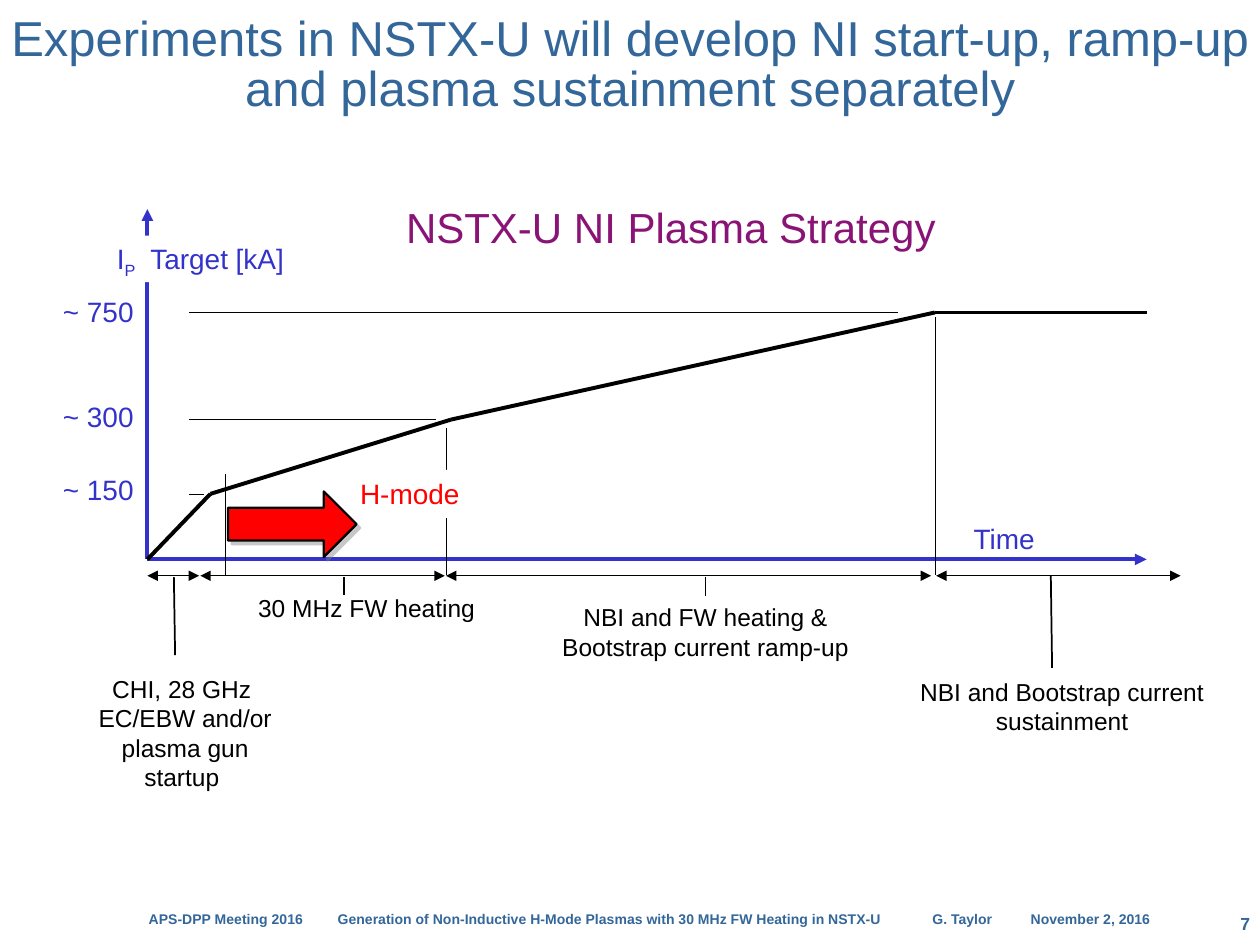
from itertools import pairwise

from lxml import etree
from pptx import Presentation
from pptx.dml.color import RGBColor
from pptx.enum.shapes import MSO_CONNECTOR, MSO_SHAPE
from pptx.enum.text import MSO_ANCHOR, PP_ALIGN as ALIGN
from pptx.oxml import parse_xml
from pptx.oxml.ns import nsdecls, qn
from pptx.util import Inches, Pt

BLUE, BLACK, WHITE, RED = "3333CC", "000000", "FFFFFF", "FF0000"
STEEL, PURPLE = "336699", "891476"
color = RGBColor.from_string

presentation = Presentation()
presentation.slide_width, presentation.slide_height = Inches(10), Inches(7.5)
slide = presentation.slides.add_slide(presentation.slide_layouts[5])


def add_line(start, end, width, line_color=BLACK, arrows=()):
    """Draw a straight line; arrows names its arrow ends, headEnd before tailEnd."""
    line = slide.shapes.add_connector(
        MSO_CONNECTOR.STRAIGHT, *(Inches(value) for value in (*start, *end)))
    line.line.width = Pt(width)
    line.line.color.rgb = color(line_color)
    for arrow in arrows:
        etree.SubElement(line.line._get_or_add_ln(), qn(f"a:{arrow}"), type="triangle")
    etree.SubElement(line._element.spPr, qn("a:effectLst"))
    return line


def add_text(place, text, size, text_color, align=ALIGN.LEFT, fill=None, insets=(0.1, 0.05)):
    box = slide.shapes.add_textbox(*(Inches(value) for value in place))
    if fill:
        box.fill.solid()
        box.fill.fore_color.rgb = color(fill)
    frame = box.text_frame
    frame.word_wrap = True
    frame.margin_left = frame.margin_right = Inches(insets[0])
    frame.margin_top = frame.margin_bottom = Inches(insets[1])
    frame.text = text
    for paragraph in frame.paragraphs:
        paragraph.alignment = align
        paragraph.font.name = "Arial"
        paragraph.font.size = Pt(size)
        paragraph.font.color.rgb = color(text_color)
    return box


# Title
title = slide.shapes.title
title.left, title.top, title.width, title.height = 0, 0, Inches(10), Inches(1.05)
frame = title.text_frame
frame.text = "Experiments in NSTX-U will develop NI start-up, ramp-up and plasma sustainment separately"
frame.word_wrap = True
frame.vertical_anchor = MSO_ANCHOR.MIDDLE
frame.margin_left = frame.margin_right = frame.margin_top = frame.margin_bottom = 0
paragraph = frame.paragraphs[0]
paragraph.alignment = ALIGN.CENTER
paragraph.line_spacing = 0.85
paragraph.font.name = "Arial"
paragraph.font.size = Pt(28)
paragraph.font.color.rgb = color(STEEL)

# Footer, its parts set apart by tab stops
page_number = add_text((9.25, 7.2, 0.67, 0.27), "7", 10, STEEL, ALIGN.RIGHT, insets=(0, 0.05))
page_number.text_frame.paragraphs[0].font.bold = True
footer_parts = ["APS-DPP Meeting 2016",
                "Generation of Non-Inductive H-Mode Plasmas with 30 MHz FW Heating in NSTX-U",
                "G. Taylor", "November 2, 2016"]
footer = add_text((1.18, 7.18, 8.15, 0.24), "\t".join(footer_parts), 8, STEEL, insets=(0, 0.05))
paragraph = footer.text_frame.paragraphs[0]
paragraph.font.bold = True
tabs = etree.Element(qn("a:tabLst"))
for position in (1.5, 6.22, 7):
    etree.SubElement(tabs, qn("a:tab"), pos=str(Inches(position)), algn="l")
paragraph._p.get_or_add_pPr().find(qn("a:defRPr")).addprevious(tabs)

# Axes and plasma current curve
origin = (1.17, 4.44)
add_line((1.17, 1.66), origin, 2.25, BLUE, ["headEnd"])
add_line(origin, (9.1, 4.44), 2.25, BLUE, ["tailEnd"])
curve = [origin, (1.67, 3.92), (3.58, 3.33), (7.42, 2.48), (9.1, 2.48)]
for start, end in pairwise(curve):
    add_line(start, end, 2.25)

# Axis labels
current_label = add_text((0.83, 1.87, 3.08, 0.37), "I", 16, BLUE, fill=WHITE)
paragraph = current_label.text_frame.paragraphs[0]
subscript = paragraph.add_run()
subscript.text = "P"
subscript.font._element.set("baseline", "-25000")
paragraph.add_run().text = "  Target [kA]"
add_text((7.63, 4.09, 1.2, 0.37), "Time", 16, BLUE)
for label, top in (("~ 150", 3.75), ("~ 300", 3.17), ("~ 750", 2.34)):
    add_text((0.5, top, 0.63, 0.27), label, 16, BLUE, fill=WHITE, insets=(0, 0))

# Guide lines
for right, y in ((7.13, 2.48), (3.46, 3.33), (1.62, 3.92)):
    add_line((1.5, y), (right, y), 0.25)
for x, top in ((1.79, 3.76), (3.54, 3.4), (7.42, 2.52)):
    add_line((x, top), (x, 4.56), 0.25)

# Phases: time span, leader line, label
phases = [
    (1.17, 1.58, (1.38, 4.58), (1.39, 5.2), (0.58, 5.3, 1.78, 1.04),
     "CHI, 28 GHz \vEC/EBW and/or plasma gun startup "),
    (1.59, 3.53, (2.73, 4.58), (2.73, 4.72), (1.47, 4.66, 2.88, 0.34), "30 MHz FW heating"),
    (3.54, 7.39, (5.6, 4.58), (5.6, 4.73), (3.95, 4.73, 3.3, 0.67),
     "NBI and FW heating &\nBootstrap current ramp-up"),
    (7.43, 9.37, (8.34, 4.57), (8.35, 5.3), (6.86, 5.32, 3.14, 0.58),
     "NBI and Bootstrap current sustainment"),
]
for left, right, leader_top, leader_end, place, text in phases:
    add_line((left, 4.57), (right, 4.57), 0.75, arrows=["headEnd", "tailEnd"])
    label = add_text(place, text, 14, BLACK, ALIGN.CENTER)
    leader = add_line(leader_top, leader_end, 1)
    if leader_end == (place[0] + place[2] / 2, place[1]):
        leader.end_connect(label, 0)

# Chart heading and H-mode marker
heading = add_text((1.59, 1.58, 7.47, 0.42), "NSTX-U NI Plasma Strategy", 24, PURPLE,
                   ALIGN.CENTER, insets=(0, 0))
heading.text_frame.paragraphs[0].line_spacing = 1.05
add_text((2.76, 3.73, 1.76, 0.38), "H-mode", 16, RED, fill=WHITE)
arrow = slide.shapes.add_shape(MSO_SHAPE.RIGHT_ARROW, Inches(1.81), Inches(3.9),
                               Inches(1.02), Inches(0.52))
arrow.fill.solid()
arrow.fill.fore_color.rgb = color(RED)
arrow.line.color.rgb = color(BLACK)
arrow.line.width = Pt(1.25)
arrow.shadow.inherit = False
arrow._element.spPr.find(qn("a:effectLst")).append(parse_xml(
    f'<a:outerShdw {nsdecls("a")} dist="{Pt(3)}" dir="2700000" algn="ctr" rotWithShape="0">'
    '<a:srgbClr val="808080"><a:alpha val="43000"/></a:srgbClr></a:outerShdw>'))

presentation.save("out.pptx")
